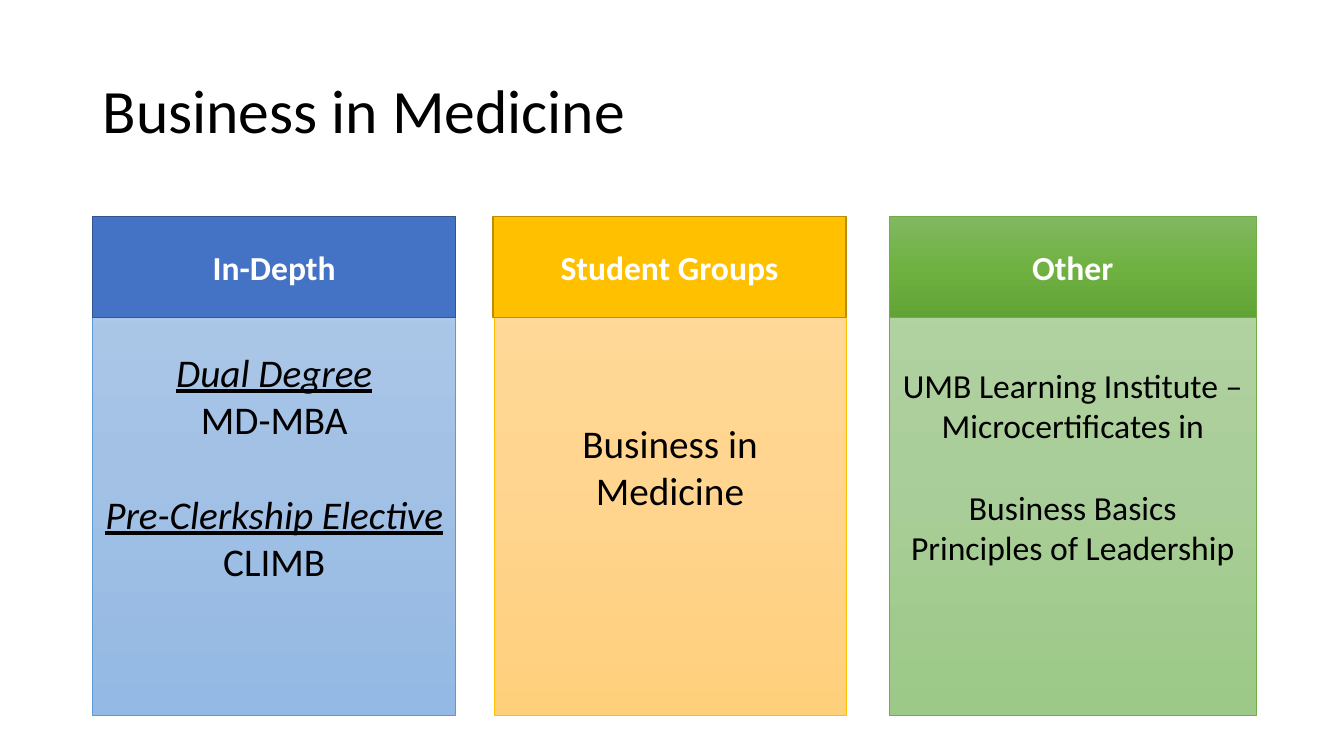
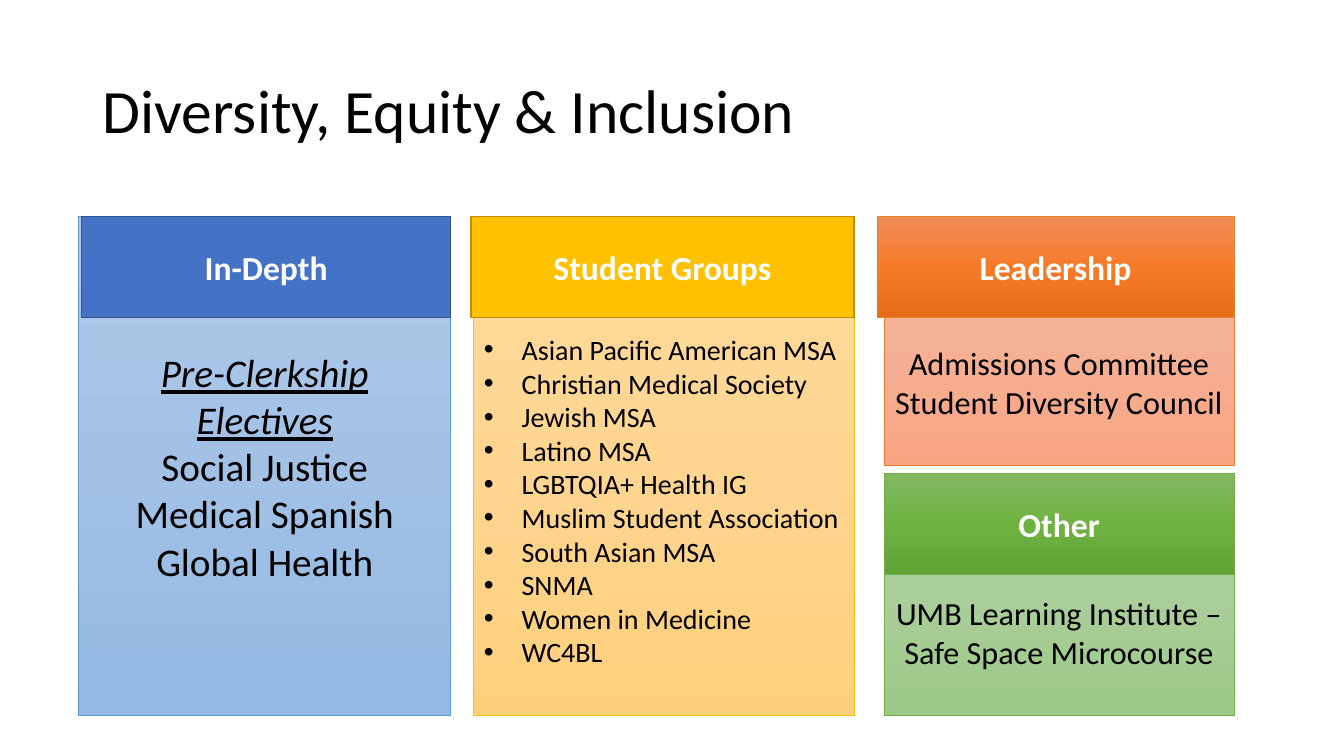
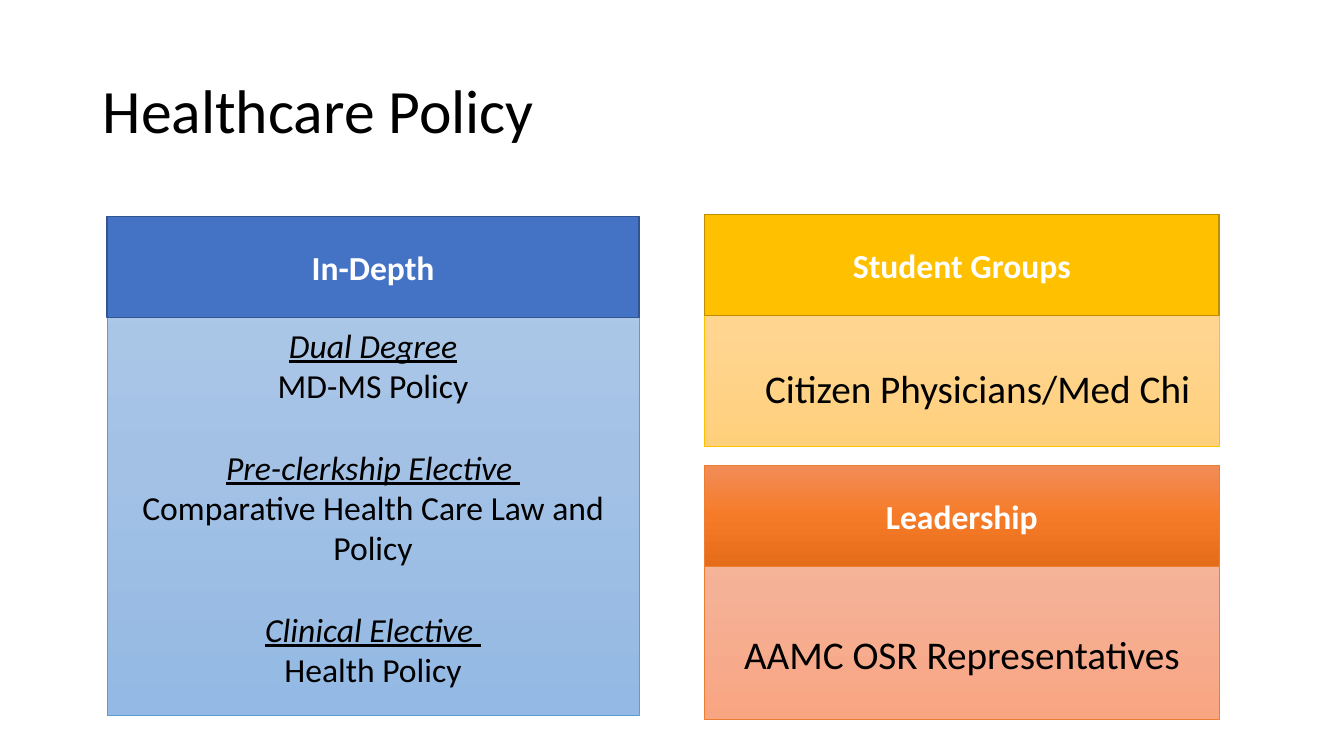
"""Builds three slides of coloured cards on medical school opportunities."""
from dataclasses import dataclass
from enum import Enum

from lxml.etree import SubElement
from pptx import Presentation
from pptx.dml.color import RGBColor
from pptx.enum.shapes import MSO_SHAPE
from pptx.enum.text import MSO_ANCHOR, PP_ALIGN
from pptx.oxml.ns import qn
from pptx.shapes.autoshape import Shape
from pptx.slide import Slide
from pptx.text.text import _Paragraph as Paragraph
from pptx.util import Emu, Inches, Pt


@dataclass(frozen=True)
class Paint:
    """Top-to-bottom fill colours with an outline."""
    fill: tuple[str, ...]
    outline: str
    weight: float = 0.5


@dataclass(frozen=True)
class Theme:
    """Shared font, type sizes, text colours and grid."""
    font: str = "Calibri"
    ink: str = "000000"
    header_ink: str = "FFFFFF"
    title_size: int = 44
    header_size: int = 24
    line_height: float = 1.22
    cell: float = 0.1
    header_rows: float = 10
    top_row: float = 21.5
    bottom_row: float = 71


THEME = Theme()


class Topic(Enum):
    """Card heading with its header and body paint."""
    IN_DEPTH = ("In-Depth", Paint(("4472C4",), "325491", 1),
                Paint(("B1CBE9", "A3C1E5", "93B9E4"), "5B9BD5"))
    GROUPS = ("Student Groups", Paint(("FFC000",), "BD8E00", 1),
              Paint(("FFDB9E", "FFD590", "FFD07C"), "FFC000"))
    LEADERSHIP = ("Leadership", Paint(("F18C57", "F67B28", "E56C19"), "ED7D31"),
                  Paint(("F7BDA5", "F5B196", "F8A582"), "ED7D31"))
    OTHER = ("Other", Paint(("81B861", "6FB242", "62A336"), "70AD47"),
             Paint(("B5D5A7", "AACE9A", "9CC987"), "70AD47"))


class Role(Enum):
    """How a line of body text is set."""
    PLAIN = "plain"
    LABEL = "label"
    BULLET = "bullet"
    INDENT = "indent"


@dataclass(frozen=True)
class Line:
    """One paragraph, optionally set off by an empty line's height."""
    text: str
    role: Role = Role.PLAIN
    spaced: bool = False


@dataclass(frozen=True)
class Card:
    """A headed panel; overhang is how far its header reaches left of the body."""
    topic: Topic
    column: float
    columns: float
    size: int
    lines: tuple[Line, ...]
    top: float = THEME.top_row
    bottom: float = THEME.bottom_row
    drop: float = 0
    overhang: float = 0


@dataclass(frozen=True)
class Page:
    """A slide title with its cards."""
    title: str
    cards: tuple[Card, ...]


STUDENT_GROUPS = (
    "Asian Pacific American MSA", "Christian Medical Society", "Jewish MSA",
    "Latino MSA", "LGBTQIA+ Health IG", "Muslim Student Association",
    "South Asian MSA", "SNMA", "Women in Medicine", "WC4BL")

PAGES = (
    Page("Business in Medicine", (
        Card(Topic.IN_DEPTH, 9.2, 36, 28, (
            Line("Dual Degree", Role.LABEL),
            Line("MD-MBA"),
            Line("Pre-Clerkship Elective", Role.LABEL, spaced=True),
            Line("CLIMB"))),
        Card(Topic.GROUPS, 49, 34.9, 28, (Line("Business in Medicine"),), overhang=0.1),
        Card(Topic.OTHER, 88.2, 36.4, 24, (
            Line("UMB Learning Institute – Microcertificates in"),
            Line("Business Basics", spaced=True),
            Line("Principles of Leadership"))))),
    Page("Diversity, Equity & Inclusion", (
        Card(Topic.IN_DEPTH, 7.8, 36.9, 28, (
            Line("Pre-Clerkship Electives", Role.LABEL),
            Line("Social Justice"),
            Line("Medical Spanish"),
            Line("Global Health")), overhang=-0.3),
        Card(Topic.GROUPS, 47, 37.7, 20,
             tuple(Line(group, Role.BULLET) for group in STUDENT_GROUPS),
             drop=6.8, overhang=0.3),
        Card(Topic.LEADERSHIP, 87.7, 34.7, 23, (
            Line("Admissions Committee"),
            Line("Student Diversity Council")), bottom=46.2, drop=8.1, overhang=0.7),
        Card(Topic.OTHER, 87.7, 34.7, 23, (
            Line("UMB Learning Institute – Safe Space Microcourse"),), top=47, drop=7.4))),
    Page("Healthcare Policy", (
        Card(Topic.IN_DEPTH, 10.6, 52.8, 24, (
            Line("Dual Degree", Role.LABEL),
            Line("MD-MS Policy"),
            Line("Pre-clerkship Elective ", Role.LABEL, spaced=True),
            Line("Comparative Health Care Law and Policy"),
            Line("Clinical Elective ", Role.LABEL, spaced=True),
            Line("Health Policy")), drop=8.1),
        Card(Topic.GROUPS, 69.9, 51, 28, (
            Line("Citizen Physicians/Med Chi", Role.INDENT),),
             top=21.3, bottom=44.3, drop=11.3),
        Card(Topic.LEADERSHIP, 69.9, 51, 28, (
            Line("AAMC OSR Representatives"),), top=46.2, bottom=71.4, drop=12.2))),
)


def cells(count: float) -> Emu:
    """Length of a number of grid cells."""
    return Inches(round(count * THEME.cell, 3))


def style(paragraph: Paragraph, size: int, color: str) -> None:
    """Set the shared font on a paragraph."""
    paragraph.font.name = THEME.font
    paragraph.font.size = Pt(size)
    paragraph.font.color.rgb = RGBColor.from_string(color)


def paint_shape(shape: Shape, paint: Paint) -> None:
    """Give a shape its solid or gradient fill and its outline."""
    shape.shadow.inherit = False
    shape.line.color.rgb = RGBColor.from_string(paint.outline)
    shape.line.width = Pt(paint.weight)
    if len(paint.fill) == 1:
        shape.fill.solid()
        shape.fill.fore_color.rgb = RGBColor.from_string(paint.fill[0])
        return
    shape.fill.gradient()
    shape.fill.gradient_angle = 270
    stops = shape.fill._fill._gradFill.find(qn("a:gsLst"))
    for stop in list(stops):
        stops.remove(stop)
    for index, color in enumerate(paint.fill):
        position = 100000 * index // (len(paint.fill) - 1)
        stop = SubElement(stops, qn("a:gs"), pos=str(position))
        SubElement(stop, qn("a:srgbClr"), val=color)


def add_panel(slide: Slide, column: float, row: float, columns: float, rows: float,
              paint: Paint) -> Shape:
    """Add a painted rectangle placed on the grid."""
    panel = slide.shapes.add_shape(
        MSO_SHAPE.RECTANGLE, cells(column), cells(row), cells(columns), cells(rows))
    paint_shape(panel, paint)
    panel.text_frame.word_wrap = True
    panel.text_frame.vertical_anchor = MSO_ANCHOR.MIDDLE
    return panel


def write_line(paragraph: Paragraph, line: Line, size: int) -> None:
    """Set one line of body text according to its role."""
    paragraph.text = line.text
    paragraph.alignment = PP_ALIGN.CENTER
    if line.role in (Role.BULLET, Role.INDENT):
        paragraph.alignment = PP_ALIGN.LEFT
        properties = paragraph._p.get_or_add_pPr()
        if line.role is Role.BULLET:
            properties.set("marL", str(cells(3.75)))
            properties.set("indent", str(-cells(3.75)))
            SubElement(properties, qn("a:buFont"), typeface="Arial")
            SubElement(properties, qn("a:buChar"), char="•")
        else:
            properties.set("marL", str(cells(5)))
    style(paragraph, size, THEME.ink)
    if line.role is Role.LABEL:
        paragraph.font.italic = True
        paragraph.font.underline = True
    if line.spaced:
        paragraph.space_before = Pt(round(size * THEME.line_height, 1))


def add_card(slide: Slide, card: Card) -> None:
    """Add a card's body and the header that covers its top."""
    heading, header_paint, body_paint = card.topic.value
    body = add_panel(slide, card.column, card.top, card.columns,
                     card.bottom - card.top, body_paint).text_frame
    body.margin_top += cells(card.drop)
    for index, line in enumerate(card.lines):
        paragraph = body.add_paragraph() if index else body.paragraphs[0]
        write_line(paragraph, line, card.size)

    header = add_panel(slide, card.column - card.overhang, card.top,
                       card.columns + card.overhang, THEME.header_rows, header_paint)
    label = header.text_frame.paragraphs[0]
    label.text = heading
    label.alignment = PP_ALIGN.CENTER
    style(label, THEME.header_size, THEME.header_ink)
    label.font.bold = True


def add_title(slide: Slide, text: str) -> None:
    """Add the slide title."""
    frame = slide.shapes.add_textbox(cells(9.2), cells(4), cells(115), cells(14.5)).text_frame
    frame.word_wrap = True
    frame.vertical_anchor = MSO_ANCHOR.MIDDLE
    title = frame.paragraphs[0]
    title.text = text
    title.line_spacing = 0.9
    style(title, THEME.title_size, THEME.ink)


def main() -> None:
    """Build and save the presentation."""
    deck = Presentation()
    deck.slide_width, deck.slide_height = Inches(13.33), Inches(7.5)
    for page in PAGES:
        slide = deck.slides.add_slide(deck.slide_layouts[6])
        add_title(slide, page.title)
        for card in page.cards:
            add_card(slide, card)
    deck.save("out.pptx")


if __name__ == "__main__":
    main()
